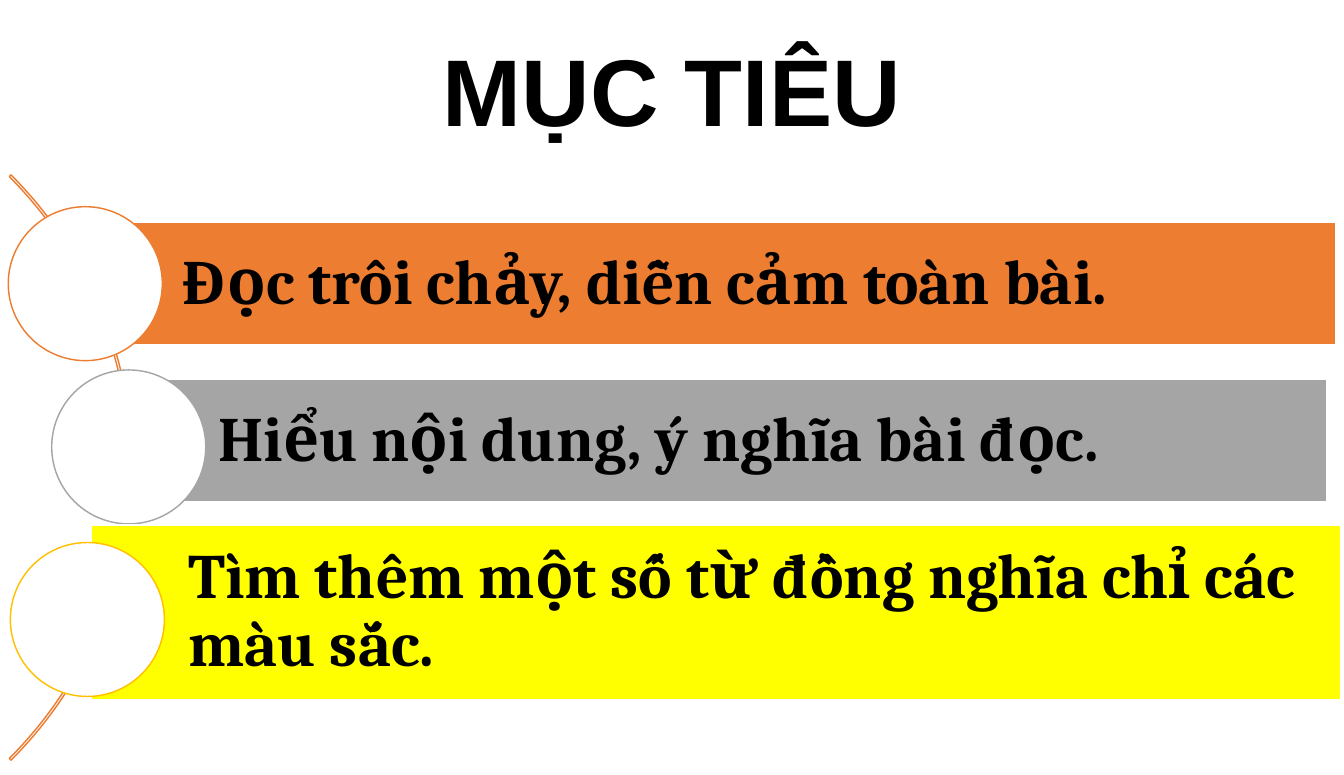
from pptx import Presentation
from pptx.dml.color import RGBColor
from pptx.enum.shapes import MSO_SHAPE
from pptx.enum.text import MSO_ANCHOR, MSO_AUTO_SIZE, PP_ALIGN
from pptx.util import Inches, Pt

ARC, BAR, CIRCLE = MSO_SHAPE.BLOCK_ARC, MSO_SHAPE.RECTANGLE, MSO_SHAPE.OVAL
MIDDLE, LEFT, CENTER = MSO_ANCHOR.MIDDLE, PP_ALIGN.LEFT, PP_ALIGN.CENTER

BLACK = RGBColor(0x00, 0x00, 0x00)
WHITE = RGBColor(0xFF, 0xFF, 0xFF)
ORANGE = RGBColor(0xED, 0x7D, 0x31)
GRAY = RGBColor(0xA5, 0xA5, 0xA5)
YELLOW = RGBColor(0xFF, 0xFF, 0x00)
GOLD = RGBColor(0xFF, 0xC0, 0x00)

WIDTH, HEIGHT = 13, 7.5
DIAMETER = 1.49
TITLE_BOX = (0.05 * WIDTH, 0.04 * HEIGHT, 0.9 * WIDTH, 1.25)
ARC_BOX = (-6.73, 0.52, 8.01, 8.01)

# text, bar box, bar colour, circle corner, circle outline
GOALS = [
    ("Đọc trôi chảy, diễn cảm toàn bài.",
     (0.83, 2.15, 12.09, 1.19), ORANGE, (0.08, 2), ORANGE),
    ("Hiểu nội dung, ý nghĩa bài đọc.",
     (1.17, 3.67, 11.66, 1.19), GRAY, (0.5, 3.58), GRAY),
    ("Tìm thêm một số từ đồng nghĩa chỉ các màu sắc.",
     (0.88, 5.08, 12.09, 1.69), YELLOW, (0.1, 5.25), GOLD),
]


def inches(box):
    return [Inches(v) for v in box]


def write(tf, text, align, font, size):
    tf.word_wrap = True
    tf.auto_size = MSO_AUTO_SIZE.NONE
    tf.vertical_anchor = MIDDLE
    p = tf.paragraphs[0]
    p.alignment, p.line_spacing = align, 0.9
    r = p.add_run()
    r.text = text
    for name, value in {"name": font, "size": Pt(size), "bold": True}.items():
        setattr(r.font, name, value)
    r.font.color.rgb = BLACK


def add_outlined(slide, kind, box, line, fill=None):
    sp = slide.shapes.add_shape(kind, *inches(box))
    sp.shadow.inherit = False
    if fill is None:
        sp.fill.background()
    else:
        sp.fill.solid()
        sp.fill.fore_color.rgb = fill
    sp.line.color.rgb = line
    sp.line.width = Pt(1)
    return sp


def add_title(slide, box):
    title = slide.shapes.title
    title.left, title.top, title.width, title.height = inches(box)
    write(title.text_frame, "MỤC TIÊU", CENTER, "Arial", 66)


def add_arc(slide, box):
    """Draw the thin arc from 315 to 45 degrees that links the circles."""
    arc = add_outlined(slide, ARC, box, ORANGE)
    for i, value in enumerate((189, 27, 0.003)):
        arc.adjustments[i] = value


def add_goal(slide, text, box, fill, corner, outline):
    bar = add_outlined(slide, BAR, box, WHITE, fill)
    tf = bar.text_frame
    margins = {"left": 0.94, "top": 0.12, "right": 0.12, "bottom": 0.12}
    for side, value in margins.items():
        setattr(tf, f"margin_{side}", Inches(value))
    write(tf, text, LEFT, "Cambria", 44)
    add_outlined(slide, CIRCLE, (*corner, DIAMETER, DIAMETER), outline, WHITE)


def main():
    prs = Presentation()
    prs.slide_width, prs.slide_height = Inches(WIDTH), Inches(HEIGHT)
    slide = prs.slides.add_slide(prs.slide_layouts.get_by_name("Title Only"))
    add_title(slide, TITLE_BOX)
    add_arc(slide, ARC_BOX)
    for goal in GOALS:
        add_goal(slide, *goal)
    prs.save("out.pptx")


if __name__ == "__main__":
    main()
